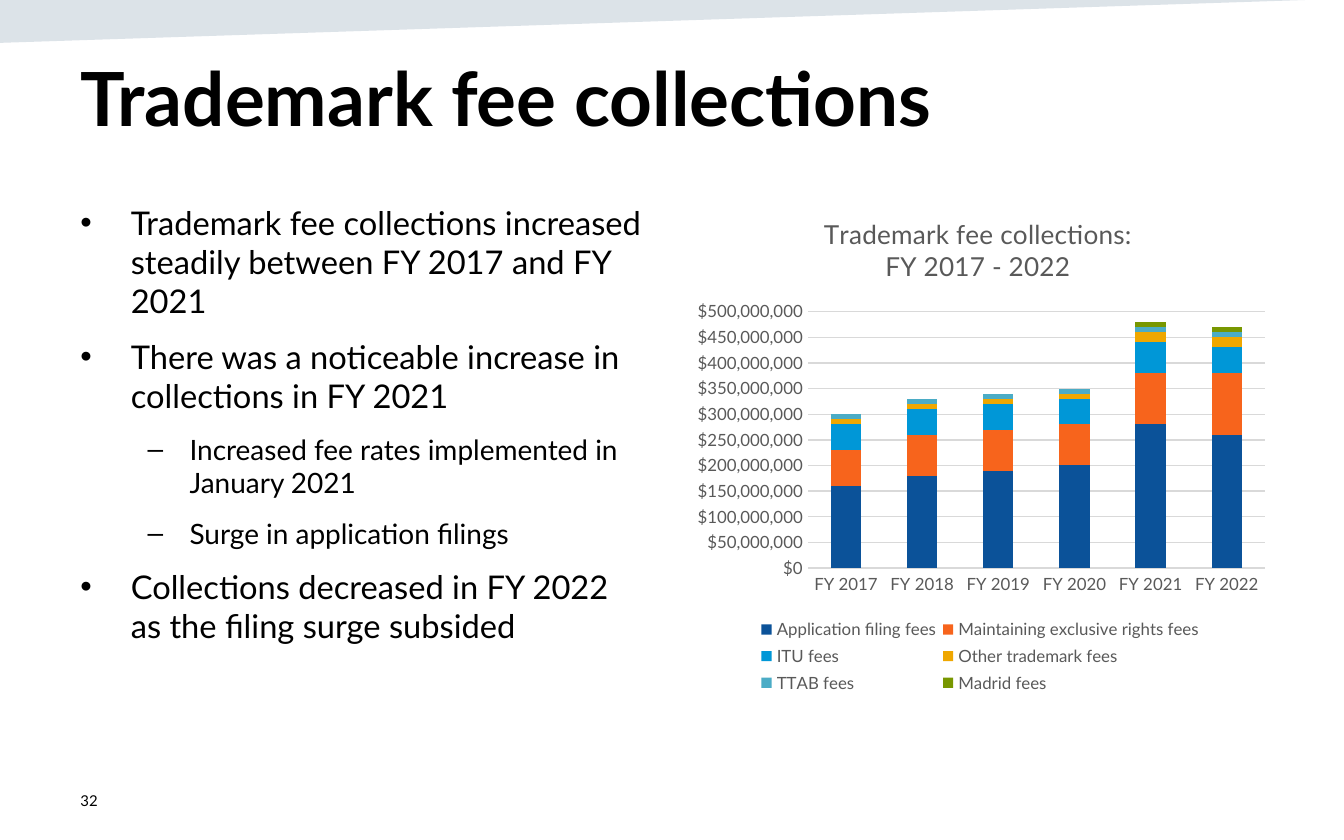
import pptx
import pptx.chart.data
import pptx.dml.color
import pptx.enum.chart
import pptx.enum.text
import pptx.oxml
import pptx.oxml.ns
import pptx.util

Pt = pptx.util.Pt
RGBColor = pptx.dml.color.RGBColor
ANCHOR = pptx.enum.text.MSO_ANCHOR
CHART = pptx.enum.chart

BLACK = RGBColor(0x00, 0x00, 0x00)
GRAY = RGBColor(0x59, 0x59, 0x59)
GRID = RGBColor(0xD9, 0xD9, 0xD9)
NAVY = RGBColor(0x16, 0x44, 0x69)
BLUE = RGBColor(0x0B, 0x52, 0x99)
ORANGE = RGBColor(0xF7, 0x64, 0x1C)
SKY = RGBColor(0x00, 0x97, 0xD7)
AMBER = RGBColor(0xEF, 0xA7, 0x00)
TEAL = RGBColor(0x4B, 0xAC, 0xC6)
GREEN = RGBColor(0x78, 0x97, 0x00)

YEARS = [f"FY {year}" for year in range(2017, 2023)]
FEES_IN_MILLIONS = [
    ("Application filing fees", BLUE, (160, 180, 190, 200, 280, 260)),
    ("Maintaining exclusive rights fees", ORANGE, (70, 80, 80, 80, 100, 120)),
    ("ITU fees", SKY, (50, 50, 50, 50, 60, 50)),
    ("Other trademark fees", AMBER, (10, 10, 10, 10, 20, 20)),
    ("TTAB fees", TEAL, (10, 10, 10, 10, 10, 10)),
    ("Madrid fees", GREEN, (0, 0, 0, 0, 10, 10)),
]
POINTS = [
    (0, "Trademark fee collections increased steadily between FY 2017 and FY 2021"),
    (0, "There was a noticeable increase in collections in FY 2021"),
    (1, "Increased fee rates implemented in January 2021"),
    (1, "Surge in application filings"),
    (0, "Collections decreased in FY 2022 as the filing surge subsided"),
]
BULLETS = [("•", 17.5, 27, 27), ("–", 15, 58.5, 22.5)]


class SlideWriter:
    """Holds the font and the current page, and draws each kind of element."""

    def __init__(self, page, font="Lato"):
        self.page = page
        self.font = font

    def style(self, font, size, color=BLACK, bold=False):
        font.name = self.font
        font.size = Pt(size)
        font.color.rgb = color
        font.bold = bold

    def text(self, place, text, size, bold=False, anchor=ANCHOR.TOP):
        box = self.page.shapes.add_textbox(*map(Pt, place))
        frame = box.text_frame
        frame.word_wrap = True
        frame.vertical_anchor = anchor
        frame.text = text
        for para in frame.paragraphs:
            for span in para.runs:
                self.style(span.font, size, bold=bold)
        return frame

    def bullets(self, place, points):
        frame = self.text(place, "\n".join(text for _, text in points), BULLETS[0][1])
        for para, (level, _) in zip(frame.paragraphs, points):
            mark, size, margin, hang = BULLETS[level]
            para.level = level
            para.space_before = Pt(9)
            para.runs[0].font.size = Pt(size)
            properties = para._p.get_or_add_pPr()
            properties.set("marL", str(Pt(margin)))
            properties.set("indent", str(-Pt(hang)))
            for detail in ('buFont {} typeface="Arial"', f'buChar {{}} char="{mark}"'):
                tag = detail.format(pptx.oxml.ns.nsdecls("a"))
                properties.append(pptx.oxml.parse_xml(f"<a:{tag}/>"))

    def polygon(self, points, color, opacity):
        start, *rest = [(Pt(x), Pt(y)) for x, y in points]
        builder = self.page.shapes.build_freeform(*start)
        builder.add_line_segments(rest)
        shape = builder.convert_to_shape()
        shape.shadow.inherit = False
        shape.line.fill.background()
        shape.fill.solid()
        shape.fill.fore_color.rgb = color
        tint = shape.fill._xPr.find(".//" + pptx.oxml.ns.qn("a:srgbClr"))
        alpha = pptx.oxml.parse_xml(
            f'<a:alpha {pptx.oxml.ns.nsdecls("a")} val="{opacity * 1000}"/>')
        tint.append(alpha)

    def arrange(self, element, before, inner=False, **fractions):
        for old in element.findall(pptx.oxml.ns.qn("c:layout")):
            element.remove(old)
        target = '<c:layoutTarget val="inner"/>' if inner else ""
        modes = "".join(f'<c:{key}Mode val="edge"/>' for key in "xy")
        values = "".join(f'<c:{key} val="{value}"/>' for key, value in fractions.items())
        layout = pptx.oxml.parse_xml(
            f'<c:layout {pptx.oxml.ns.nsdecls("c")}><c:manualLayout>'
            f"{target}{modes}{values}</c:manualLayout></c:layout>")
        element.find(pptx.oxml.ns.qn(before)).addprevious(layout)

    def stacked_columns(self, place, title, categories, series):
        data = pptx.chart.data.CategoryChartData()
        data.categories = categories
        for name, _, millions in series:
            data.add_series(name, [value * 1_000_000 for value in millions])
        chart = self.page.shapes.add_chart(
            CHART.XL_CHART_TYPE.COLUMN_STACKED, *map(Pt, place), data).chart
        self.style(chart.font, 10)

        chart.has_title = True
        frame = chart.chart_title.text_frame
        frame.text = title
        for para in frame.paragraphs:
            self.style(para.runs[0].font, 14, GRAY)
        chart.chart_title.include_in_layout = False
        self.arrange(chart.chart_title._element, "c:overlay", x=0.23, y=0.03)

        plot = chart.plots[0]
        plot.gap_width = 150
        plot.overlap = 100
        plot.vary_by_categories = False
        for bars, (_, color, _) in zip(plot.series, series):
            bars.format.fill.solid()
            bars.format.fill.fore_color.rgb = color
        self.arrange(chart._chartSpace.chart.plotArea, "c:barChart",
                     inner=True, x=0.21, y=0.23, w=0.77, h=0.51)

        for axis in (chart.category_axis, chart.value_axis):
            axis.major_tick_mark = CHART.XL_TICK_MARK.NONE
            self.style(axis.tick_labels.font, 9, GRAY)
        values = chart.value_axis
        values.minimum_scale = 0
        values.maximum_scale = 500_000_000
        values.major_unit = 50_000_000
        values.tick_labels.number_format = '"$"#,##0'
        values.tick_labels.number_format_is_linked = False
        values.format.line.fill.background()
        for line in (chart.category_axis.format.line, values.major_gridlines.format.line):
            line.color.rgb = GRID
            line.width = Pt(0.75)

        chart.has_legend = True
        chart.legend.position = CHART.XL_LEGEND_POSITION.BOTTOM
        chart.legend.include_in_layout = False
        self.style(chart.legend.font, 9, GRAY)
        self.arrange(chart.legend._element, "c:overlay", x=0.12, y=0.83, w=0.76, h=0.17)


def main():
    deck = pptx.Presentation()
    deck.slide_width = Pt(720)
    deck.slide_height = Pt(450)
    writer = SlideWriter(deck.slides.add_slide(deck.slide_layouts[6]))
    writer.polygon([(0, -0.7), (0, 23), (721.5, -0.7)], NAVY, 15)
    writer.text((36, 417, 162, 23.5), "32", 8, anchor=ANCHOR.MIDDLE)
    writer.text((36, 24.5, 648, 75), "Trademark fee collections", 40, bold=True)
    writer.bullets((36, 105, 318, 269.5), POINTS)
    writer.stacked_columns((366, 105, 318, 269.5),
                           "Trademark fee collections:\nFY 2017 - 2022", YEARS, FEES_IN_MILLIONS)
    deck.save("out.pptx")


if __name__ == "__main__":
    main()
